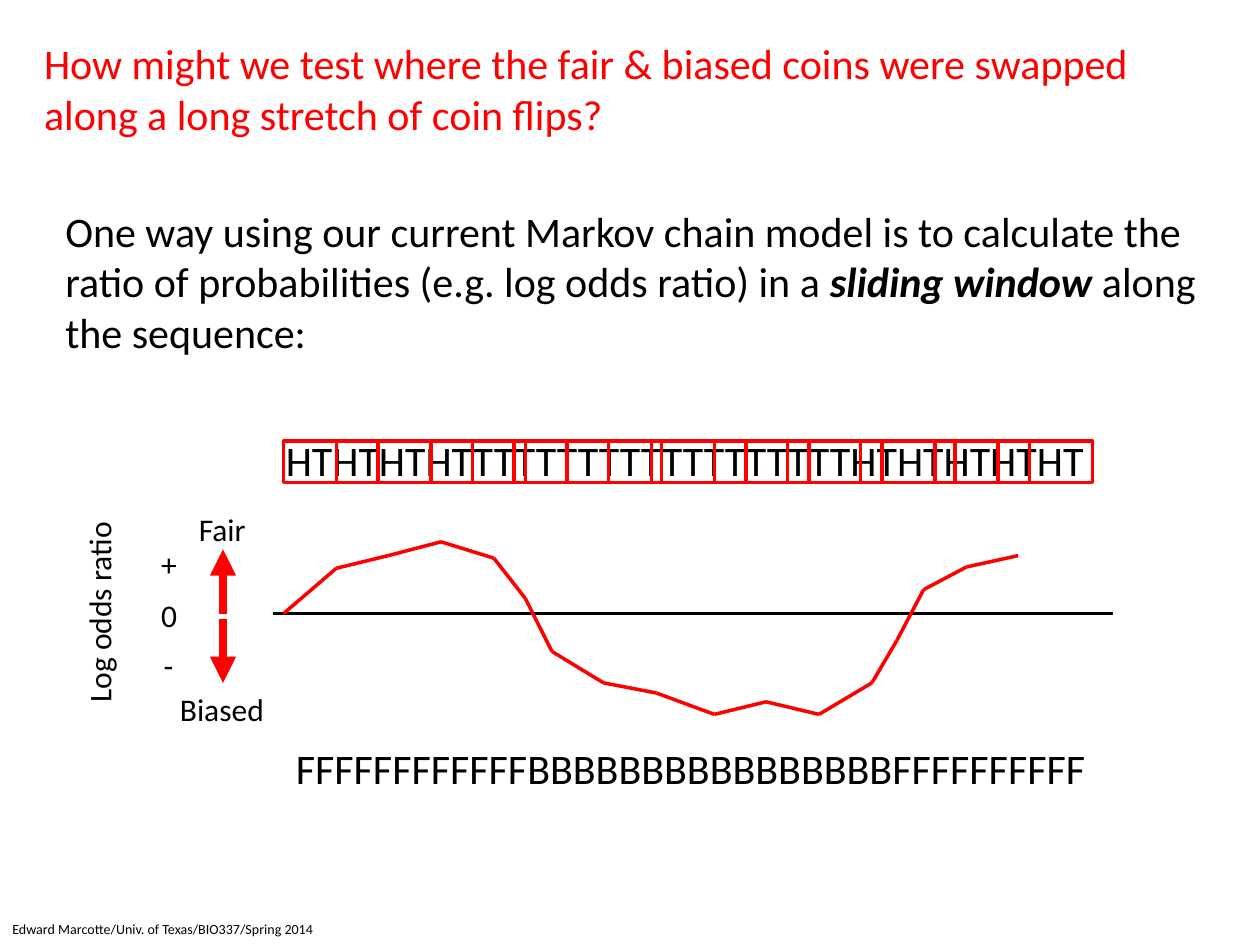
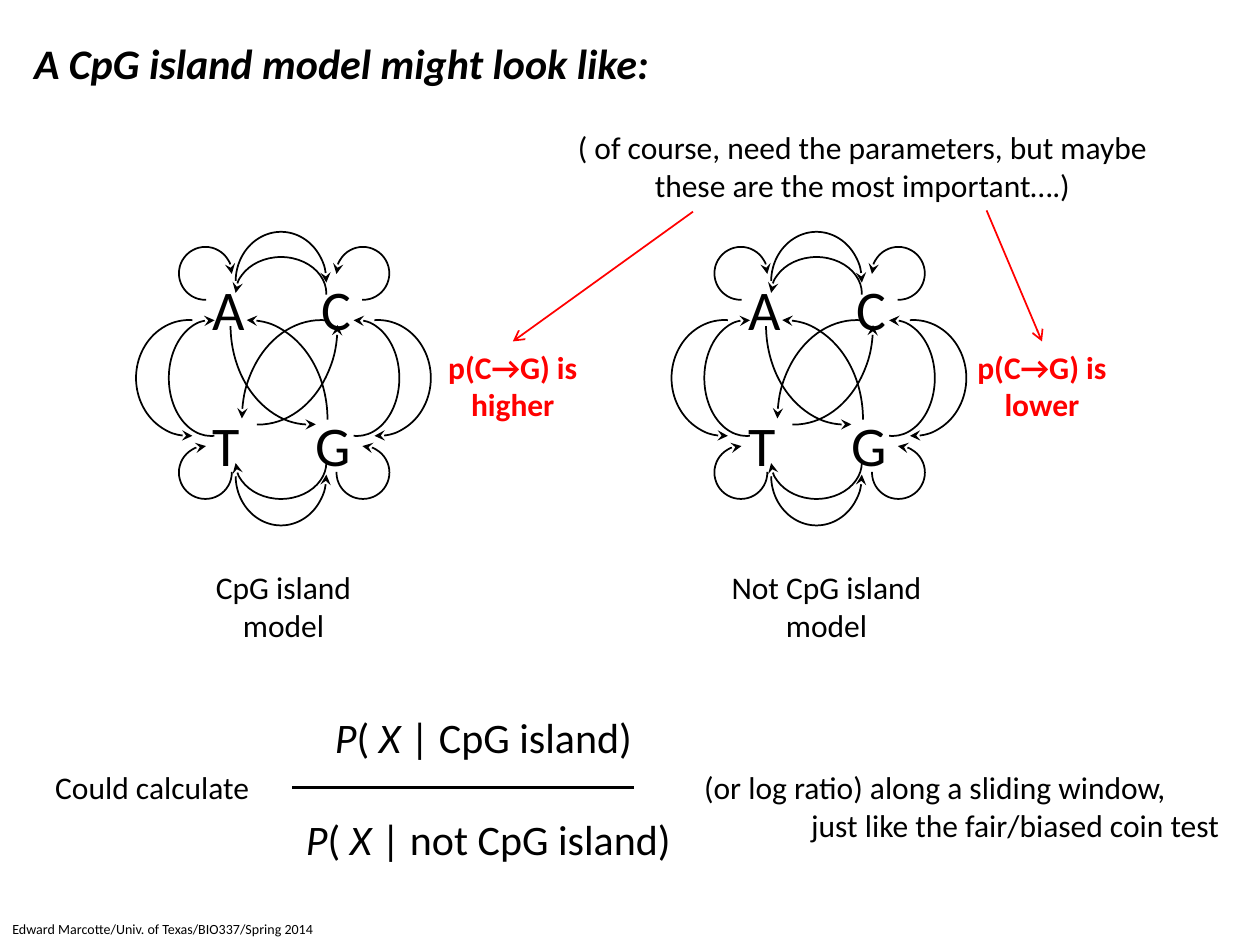
from itertools import pairwise

from lxml import etree
from pptx import Presentation
from pptx.dml.color import RGBColor
from pptx.enum.shapes import MSO_CONNECTOR, MSO_SHAPE
from pptx.enum.text import MSO_ANCHOR, MSO_AUTO_SIZE, PP_ALIGN
from pptx.oxml.ns import qn
from pptx.util import Inches, Pt

RED = RGBColor(0xFF, 0, 0)
BLACK = RGBColor(0, 0, 0)
FONT = "Calibri"
LEFT, CENTER = PP_ALIGN.LEFT, PP_ALIGN.CENTER
TOP, FIXED = MSO_ANCHOR.TOP, MSO_AUTO_SIZE.NONE
LINE, RECT, ARC = MSO_CONNECTOR.STRAIGHT, MSO_SHAPE.RECTANGLE, MSO_SHAPE.ARC
FOOTER = "Edward Marcotte/Univ. of Texas/BIO337/Spring 2014"

WINDOWS = (2.25, 2.67, 3, 3.42, 4.08, 4.5, 5.17, 5.67, 6.25, 6.83, 7.42, 7.92)
ODDS = ((2.25, 4.87), (2.67, 4.51), (3.08, 4.41), (3.5, 4.3), (3.92, 4.43),
        (4.17, 4.75), (4.38, 5.17), (4.79, 5.42), (5.21, 5.5), (5.67, 5.67),
        (6.08, 5.57), (6.5, 5.67), (6.92, 5.42), (7.12, 5.08), (7.33, 4.68),
        (7.67, 4.5), (8.08, 4.41))

# Start and end angles of the arcs, in degrees
BOW, CROSS, WIDE = (180.8, 1.35), (269.2, 0), (180.8, 273.4)
SIDE, LOOP = (86.5, 273.4), (88.5, 1.27)
# Left, top, width, height, angles, flip, rotation, arrow end
ARCS = (
    (0.79, 0.05, 0.72, 0.79, BOW, "", 0, "tail"),
    (0.79, 0.25, 0.72, 0.58, BOW, "", 0, "head"),
    (0.79, 1.59, 0.72, 0.79, BOW, "V", 0, "tail"),
    (0.79, 1.59, 0.72, 0.58, BOW, "V", 0, "head"),
    (0.26, 0.75, 1.26, 1.58, CROSS, "", 0, "head"),
    (0.84, 0.75, 1.26, 1.58, WIDE, "", 0, "head"),
    (0.34, 0, 1.26, 1.58, CROSS, "V", 0, "tail"),
    (0.75, 0, 1.26, 1.58, WIDE, "V", 0, "tail"),
    (0.26, 0.75, 0.67, 0.92, SIDE, "V", 0, "head"),
    (0, 0.75, 0.84, 0.92, SIDE, "V", 0, "tail"),
    (1.42, 0.75, 0.67, 0.92, SIDE, "HV", 0, "head"),
    (1.5, 0.75, 0.84, 0.92, SIDE, "HV", 0, "tail"),
    (0.34, 0.17, 0.42, 0.42, LOOP, "", 0, "tail"),
    (0.34, 1.75, 0.42, 0.42, LOOP, "", 270, "tail"),
    (1.59, 0.17, 0.42, 0.42, LOOP, "H", 0, "tail"),
    (1.59, 1.75, 0.42, 0.42, LOOP, "V", 270, "tail"),
)
BASES = (("A", 0.51, 0.34), ("C", 1.37, 0.34), ("T", 0.51, 1.42), ("G", 1.33, 1.42))


def style(para, size, color=BLACK, bold=False, italic=False, align=LEFT):
    para.alignment = align
    font = para.font
    font.name, font.size, font.color.rgb = FONT, Pt(size), color
    font.bold, font.italic = bold, italic


def write(slide, box, paras, size=18, wrap=True, **look):
    """Add a text box; a paragraph is a string or a list of (text, bold, italic)."""
    shape = slide.shapes.add_textbox(*map(Inches, box))
    frame = shape.text_frame
    frame.word_wrap = wrap
    for i, item in enumerate(paras):
        para = frame.paragraphs[0] if i == 0 else frame.add_paragraph()
        style(para, size, **look)
        if isinstance(item, str):
            para.add_run().text = item
            continue
        for text, bold, italic in item:
            run = para.add_run()
            run.text = text
            run.font.bold, run.font.italic = bold, italic
    return shape


def tip(shape, end, kind):
    """Put an arrowhead on the head or tail end of a line."""
    ln = shape._element.spPr.find(qn("a:ln"))
    etree.SubElement(ln, qn(f"a:{end}End"), type=kind)


def stroke(shape, color, width):
    shape.line.color.rgb = color
    shape.line.width = Pt(width)


def link(slide, start, end, color=RED, width=2, arrow=None):
    line = slide.shapes.add_connector(LINE, *map(Inches, (*start, *end)))
    stroke(line, color, width)
    if arrow:
        tip(line, "tail", arrow)
    etree.SubElement(line._element.spPr, qn("a:effectLst"))


def outline(slide, kind, box, color, width):
    shape = slide.shapes.add_shape(kind, *map(Inches, box))
    shape.shadow.inherit = False
    shape.fill.background()
    stroke(shape, color, width)
    return shape


def start(deck, text, box, **look):
    """Add a slide with its title and footer."""
    slide = deck.slides.add_slide(deck.slide_layouts[5])
    title = slide.shapes.title
    title.left, title.top, title.width, title.height = map(Inches, box)
    frame = title.text_frame
    frame.text = text
    frame.word_wrap, frame.auto_size, frame.vertical_anchor = True, FIXED, TOP
    style(frame.paragraphs[0], 24, **look)
    write(slide, (0, 7.26, 3, 0.24), [FOOTER], 8)
    return slide


def plot(slide):
    """Draw the log odds curve about its zero line."""
    link(slide, (2.17, 4.87), (8.83, 4.87), BLACK)
    for a, b in pairwise(ODDS):
        link(slide, a, b)


def scale(slide, x, y):
    """Draw the axis labels and arrows; y is the level of the plus sign."""
    for i, sign in enumerate("+0-"):
        write(slide, (x + (0.02 if sign == "-" else 0), y + 0.4 * i, 0.4, 0.4), [sign])
    for top, tag, left in ((-0.28, "Fair", 0.3), (1.15, "Biased", 0.15)):
        write(slide, (x + left, y + top, 1, 0.4), [tag])
    mid = x + 0.59
    link(slide, (mid, y + 0.59), (mid, y + 0.08), width=5, arrow="triangle")
    link(slide, (mid, y + 0.63), (mid, y + 1.14), width=5, arrow="triangle")
    name = write(slide, (x - 1.22, y + 0.38, 1.65, 0.4), ["Log odds ratio"],
                 wrap=False, align=CENTER)
    name.rotation = 270


def coins(deck):
    slide = start(deck, "How might we test where the fair & biased coins were swapped "
                  "along a long stretch of coin flips?", (0.25, 0.25, 9.5, 0.91), color=RED)
    write(slide, (0.42, 1.58, 9.17, 1.31), [[
        ("One way using our current Markov chain model is to calculate the ratio of "
         "probabilities (e.g. log odds ratio) in a ", False, False),
        ("sliding window ", True, True),
        ("along the sequence:", False, False)]], 24)
    write(slide, (2.17, 3.4, 7, 0.5), ["HTHTHTHTTTTTTTTTTTTTTTTTTTHTHTHTHTHT"], 24)
    write(slide, (2.25, 5.84, 7, 0.5), ["F" * 12 + "B" * 16 + "F" * 10], 24)
    plot(slide)
    for x in WINDOWS:
        outline(slide, RECT, (x, 3.5, 0.75, 0.33), RED, 2)
    scale(slide, 1.18, 4.28)


def model(slide, x, y):
    """Draw the four bases and the moves between them."""
    for base, dx, dy in BASES:
        write(slide, (x + dx, y + dy, 0.6, 0.64), [base], 32)
    for dx, dy, w, h, angles, flip, turn, end in ARCS:
        arc = outline(slide, ARC, (x + dx, y + dy, w, h), BLACK, 1)
        for i, angle in enumerate(angles):
            arc.adjustments[i] = angle * 0.6
        arc.rotation = turn
        for axis in flip:
            arc._element.spPr.xfrm.set("flip" + axis, "1")
        tip(arc, end, "stealth")


def ratio(slide, x, y):
    """Set out the fraction and the words on both sides of it."""
    for text, dx, dy in (("| CpG island)", 2.23, 0), ("| not CpG island)", 2, 0.81)):
        write(slide, (x + dx, y + dy, 3.6, 0.5), [[
            ("P", False, True), ("( ", False, False),
            ("X ", False, True), (text, False, False)]], 24)
    link(slide, (x + 1.99, y + 0.65), (x + 4.7, y + 0.65), BLACK)
    for text, dx, dy, w in (("Could calculate", 0.01, 0.45, 1.9),
                            ("(or log ratio) along a sliding window,", 5.16, 0.45, 4.3),
                            ("just like the fair/biased coin test", 6.01, 0.75, 3.6)):
        write(slide, (x + dx, y + dy, w, 0.4), [text])


def island(deck):
    slide = start(deck, "A CpG island model might look like:", (0.17, 0.25, 9.58, 0.91),
                  bold=True, italic=True)
    for x, tag, mid, note, spot in ((1.08, "CpG island", 2.25, "higher", 4.07),
                                    (5.33, "Not CpG island", 6.56, "lower", 8.27)):
        model(slide, x, 1.79)
        write(slide, (mid - 1, 4.46, 2, 0.71), [tag, "model"], align=CENTER)
        write(slide, (spot - 0.75, 2.71, 1.5, 0.71), ["p(C→G) is", note],
              color=RED, bold=True, align=CENTER)
    write(slide, (4.44, 0.97, 4.81, 0.71), ["( of course, need the parameters, but maybe "
          "these are the most important….)"], align=CENTER)
    link(slide, (5.5, 1.68), (4.07, 2.71), width=1, arrow="arrow")
    link(slide, (7.83, 1.67), (8.27, 2.71), width=1, arrow="arrow")
    ratio(slide, 0.33, 5.6)


def main():
    deck = Presentation()
    deck.slide_width, deck.slide_height = Inches(10), Inches(7.5)
    coins(deck)
    island(deck)
    deck.save("out.pptx")


if __name__ == "__main__":
    main()
